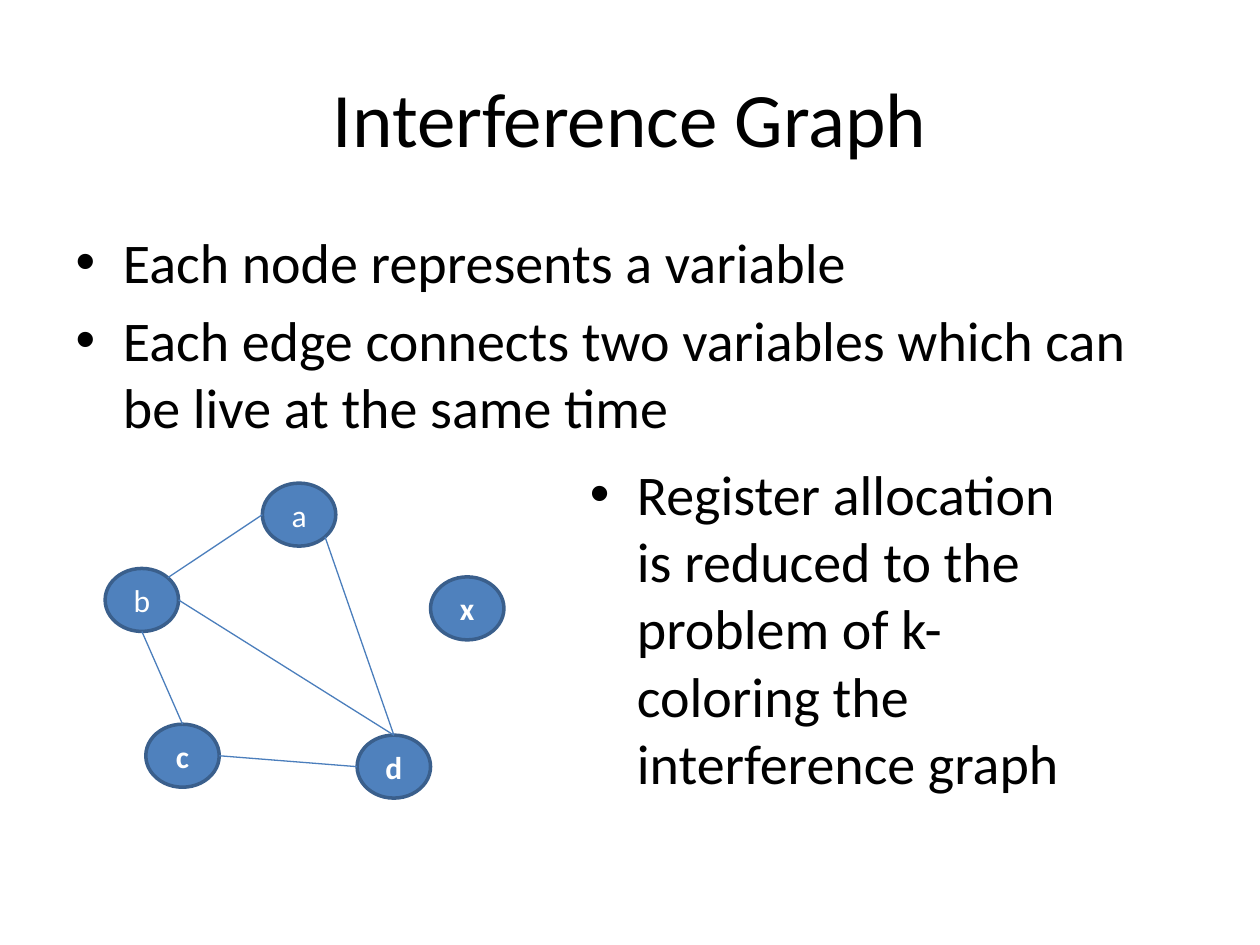
import dataclasses
import math

import lxml.etree
import pptx
import pptx.dml.color
import pptx.enum.shapes
import pptx.enum.text
import pptx.oxml.ns
import pptx.util

Cm = pptx.util.Cm
Pt = pptx.util.Pt
qn = pptx.oxml.ns.qn


@dataclasses.dataclass(frozen=True)
class Theme:
    font: str = "Calibri"
    text: str = "000000"
    node_text: str = "FFFFFF"
    node_fill: str = "4F81BD"
    node_line: str = "3A5F8C"
    edge: str = "4B7EBC"
    title_size: float = 44
    body_size: float = 32
    node_size: float = 18
    node_line_width: float = 2
    edge_width: float = 0.75


NODE_WIDTH, NODE_HEIGHT = 1.48, 1.27
DIAGONAL = math.sqrt(0.5)

# Direction from a node's centre to a point on its outline, in radii.
SITES = {
    "top": (0, -1),
    "left": (-1, 0),
    "bottom": (0, 1),
    "right": (1, 0),
    "top right": (DIAGONAL, -DIAGONAL),
    "bottom right": (DIAGONAL, DIAGONAL),
}

# Name: left, top, bold
NODES = {
    "b": (2.12, 11.46, False),
    "a": (5.29, 9.74, False),
    "c": (2.94, 14.6, True),
    "x": (8.68, 11.63, True),
    "d": (7.2, 14.82, True),
}

EDGES = [
    ("b", "top right", "a", "left"),
    ("b", "bottom", "c", "top"),
    ("c", "right", "d", "left"),
    ("b", "right", "d", "top"),
    ("a", "bottom right", "d", "top"),
]


def rgb(value):
    return pptx.dml.color.RGBColor.from_string(value)


def set_attributes(target, values):
    for name, value in values.items():
        setattr(target, name, value)


def place(shape, left, top, width, height):
    set_attributes(shape, {"left": Cm(left), "top": Cm(top),
                           "width": Cm(width), "height": Cm(height)})


def site_point(node, site):
    """Return the position of a named site on the outline of a node."""
    across, down = SITES[site]
    return (int(node.left + node.width * (1 + across) / 2),
            int(node.top + node.height * (1 + down) / 2))


class SlideBuilder:
    def __init__(self, slide, theme):
        self.slide = slide
        self.theme = theme

    def set_text(self, shape, lines, size, color, bold=False, **paragraph_format):
        frame = shape.text_frame
        frame.text = "\n".join(lines)
        frame.word_wrap = True
        for paragraph in frame.paragraphs:
            set_attributes(paragraph, paragraph_format)
            for run in paragraph.runs:
                set_attributes(run.font, {"name": self.theme.font, "size": Pt(size), "bold": bold})
                run.font.color.rgb = rgb(color)

    def title(self, text, box):
        shape = self.slide.shapes.title
        place(shape, *box)
        self.set_text(shape, [text], self.theme.title_size, self.theme.text,
                      alignment=pptx.enum.text.PP_ALIGN.CENTER)
        shape.text_frame.vertical_anchor = pptx.enum.text.MSO_ANCHOR.MIDDLE

    def body(self, lines, box):
        shape = self.slide.placeholders[1]
        place(shape, *box)
        self.set_text(shape, lines, self.theme.body_size, self.theme.text)

    def bullet_box(self, lines, box):
        shape = self.slide.shapes.add_textbox(*map(Cm, box))
        self.set_text(shape, lines, self.theme.body_size, self.theme.text,
                      space_before=Pt(0.2 * self.theme.body_size))
        indent = Cm(0.95)
        for paragraph in shape.text_frame.paragraphs:
            properties = paragraph._p.get_or_add_pPr()
            properties.set("marL", str(indent))
            properties.set("indent", str(-indent))
            lxml.etree.SubElement(properties, qn("a:buFont"), typeface="Arial")
            lxml.etree.SubElement(properties, qn("a:buChar"), char="•")

    def node(self, name, left, top, bold):
        shape = self.slide.shapes.add_shape(
            pptx.enum.shapes.MSO_SHAPE.OVAL,
            Cm(left), Cm(top), Cm(NODE_WIDTH), Cm(NODE_HEIGHT))
        shape.shadow.inherit = False
        shape.fill.solid()
        shape.fill.fore_color.rgb = rgb(self.theme.node_fill)
        shape.line.color.rgb = rgb(self.theme.node_line)
        shape.line.width = Pt(self.theme.node_line_width)
        self.set_text(shape, [name], self.theme.node_size, self.theme.node_text, bold,
                      alignment=pptx.enum.text.PP_ALIGN.CENTER)
        shape.text_frame.vertical_anchor = pptx.enum.text.MSO_ANCHOR.MIDDLE
        return shape

    def edge(self, start, start_site, end, end_site):
        connector = self.slide.shapes.add_connector(
            pptx.enum.shapes.MSO_CONNECTOR.STRAIGHT,
            *site_point(start, start_site), *site_point(end, end_site))
        if end_site == "top":
            connector.end_connect(end, 0)
        connector.line.color.rgb = rgb(self.theme.edge)
        connector.line.width = Pt(self.theme.edge_width)
        lxml.etree.SubElement(connector._element.spPr, qn("a:effectLst"))


def main():
    presentation = pptx.Presentation()
    set_attributes(presentation, {"slide_width": Cm(25.4), "slide_height": Cm(19.05)})
    slide = presentation.slides.add_slide(presentation.slide_layouts[1])
    builder = SlideBuilder(slide, Theme())

    builder.title("Interference Graph", (1.27, 0.76, 22.86, 3.18))
    builder.body(["Each node represents a variable",
                  "Each edge connects two variables which can be live at the same time"],
                 (1.27, 4.45, 22.86, 12.57))

    nodes = {name: builder.node(name, *values) for name, values in NODES.items()}
    for start, start_site, end, end_site in EDGES:
        builder.edge(nodes[start], start_site, nodes[end], end_site)

    builder.bullet_box(["Register allocation is reduced to the problem of "
                        "k-coloring the interference graph"],
                       (11.64, 9.14, 10.59, 12.57))
    presentation.save("out.pptx")


if __name__ == "__main__":
    main()
